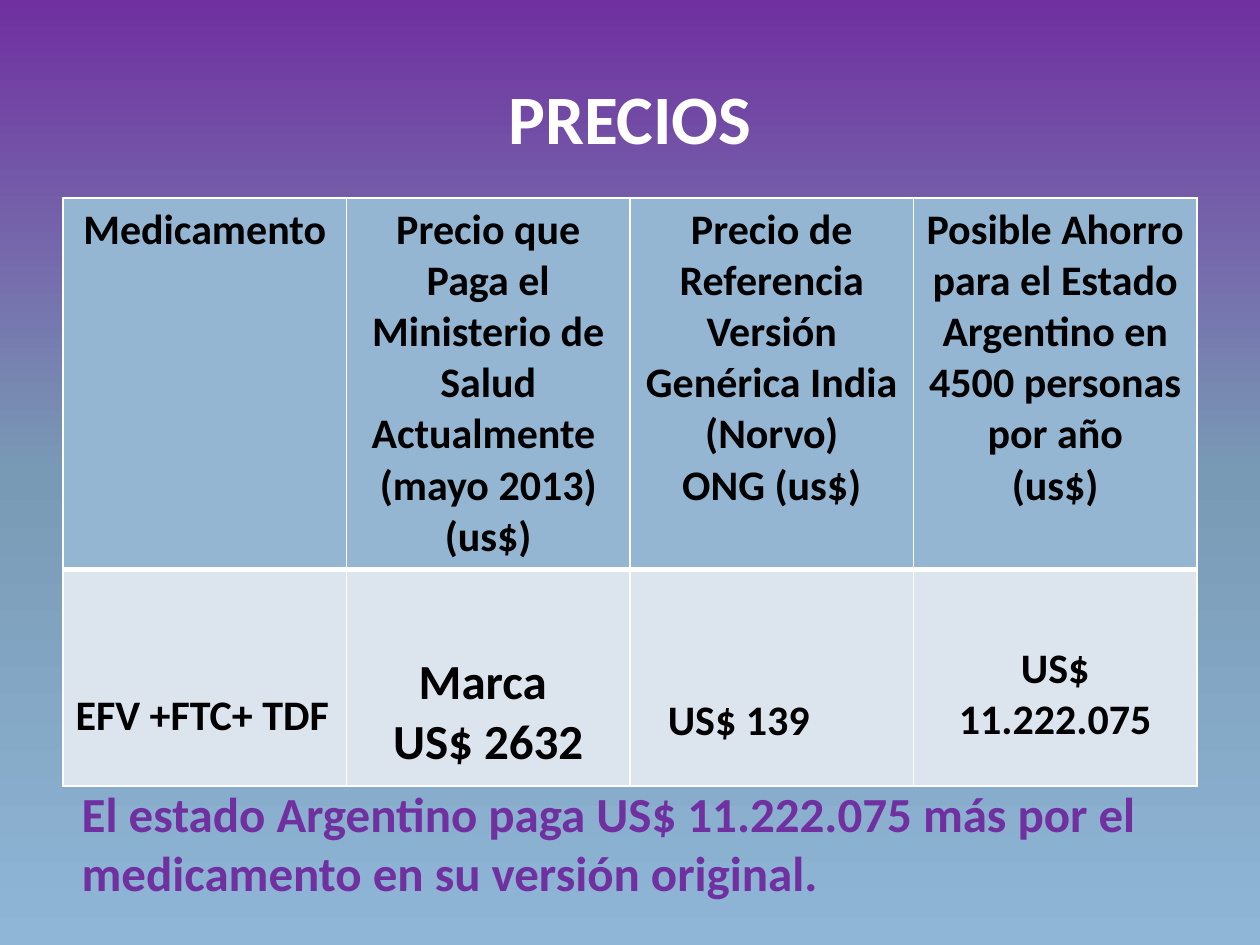
from copy import deepcopy
from lxml.etree import SubElement
from pptx import Presentation
from pptx.dml.color import RGBColor
from pptx.enum.text import MSO_ANCHOR, PP_ALIGN
from pptx.oxml.ns import qn
from pptx.util import Inches, Pt

STOPS = [(0, "7030A0"), (0.5, "799AB5"), (1, "8FB6D7")]
TITLE = "PRECIOS"
HEAD = [
    ["Medicamento"],
    ["Precio que Paga el Ministerio de Salud Actualmente ", "(mayo 2013) (us$)"],
    ["Precio de Referencia Versión Genérica India (Norvo)", "ONG (us$)"],
    ["Posible Ahorro", "para el Estado Argentino en 4500 personas por año", "(us$)"],
]
BODY = [
    (["EFV +FTC+ TDF"], 24, PP_ALIGN.LEFT, 0.1, 0.96),
    (["Marca ", "US$ 2632"], 28, PP_ALIGN.CENTER, 0.07, 0.66),
    (["US$ 139"], 24, PP_ALIGN.LEFT, 0.3, 1),
    (["US$ 11.222.075"], 24, PP_ALIGN.CENTER, 0.07, 0.59),
]
NOTE = "El estado Argentino paga US$ 11.222.075 más por el medicamento en su versión original."


def color(code):
    return RGBColor.from_string(code)


def write(frame, lines, size, tone, align):
    frame.word_wrap = True
    frame.text = "\n".join(lines)
    for para in frame.paragraphs:
        para.alignment = align
        font = para.font
        font.name, font.size, font.bold = "Calibri", Pt(size), True
        font.color.rgb = color(tone)


def add_text(slide, box, text, size, tone, align):
    frame = slide.shapes.add_textbox(*map(Inches, box)).text_frame
    write(frame, [text], size, tone, align)
    return frame


def paint(cell, tone, edges):
    props = cell._tc.get_or_add_tcPr()
    for side, width in edges.items():
        line = SubElement(props, qn("a:" + side), w=str(Pt(width)))
        fill = SubElement(line, qn("a:solidFill"))
        SubElement(fill, qn("a:srgbClr"), val="FFFFFF")
    cell.fill.solid()
    cell.fill.fore_color.rgb = color(tone)


def add_back(slide):
    fill = slide.background.fill
    fill.gradient()
    fill.gradient_angle = 270
    stops = slide._element.find(".//" + qn("a:gsLst"))
    stops.append(deepcopy(stops[-1]))
    for stop, (place, tone) in zip(fill.gradient_stops, STOPS):
        stop.position = place
        stop.color.rgb = color(tone)


def add_prices(slide):
    box = map(Inches, (0.5, 1.57, 9, 4.67))
    table = slide.shapes.add_table(2, len(HEAD), *box).table
    for row, height in zip(table.rows, (2.95, 1.72)):
        row.height = Inches(height)
    edges = {"lnL": 1, "lnR": 1, "lnT": 1, "lnB": 3}
    for col, lines in enumerate(HEAD):
        cell = table.cell(0, col)
        write(cell.text_frame, lines, 24, "000000", PP_ALIGN.CENTER)
        paint(cell, "94B6D2", edges)
    edges = {"lnL": 1, "lnR": 1, "lnT": 3, "lnB": 1}
    for col, (lines, size, align, left, top) in enumerate(BODY):
        cell = table.cell(1, col)
        cell.margin_left, cell.margin_right = Inches(left), Inches(0.07)
        cell.margin_top, cell.margin_bottom = Inches(top), 0
        write(cell.text_frame, lines, size, "000000", align)
        paint(cell, "DCE5EE", edges)


def main():
    deck = Presentation()
    deck.slide_width, deck.slide_height = Inches(10), Inches(7.5)
    slide = deck.slides.add_slide(deck.slide_layouts[6])
    add_back(slide)
    title = add_text(slide, (0.5, 0.3, 9, 1.25), TITLE, 39.6, "FFFFFF", PP_ALIGN.CENTER)
    title.vertical_anchor = MSO_ANCHOR.MIDDLE
    add_prices(slide)
    add_text(slide, (0.55, 6.17, 9.45, 1.04), NOTE, 28, "7030A0", PP_ALIGN.LEFT)
    deck.save("out.pptx")


if __name__ == "__main__":
    main()
